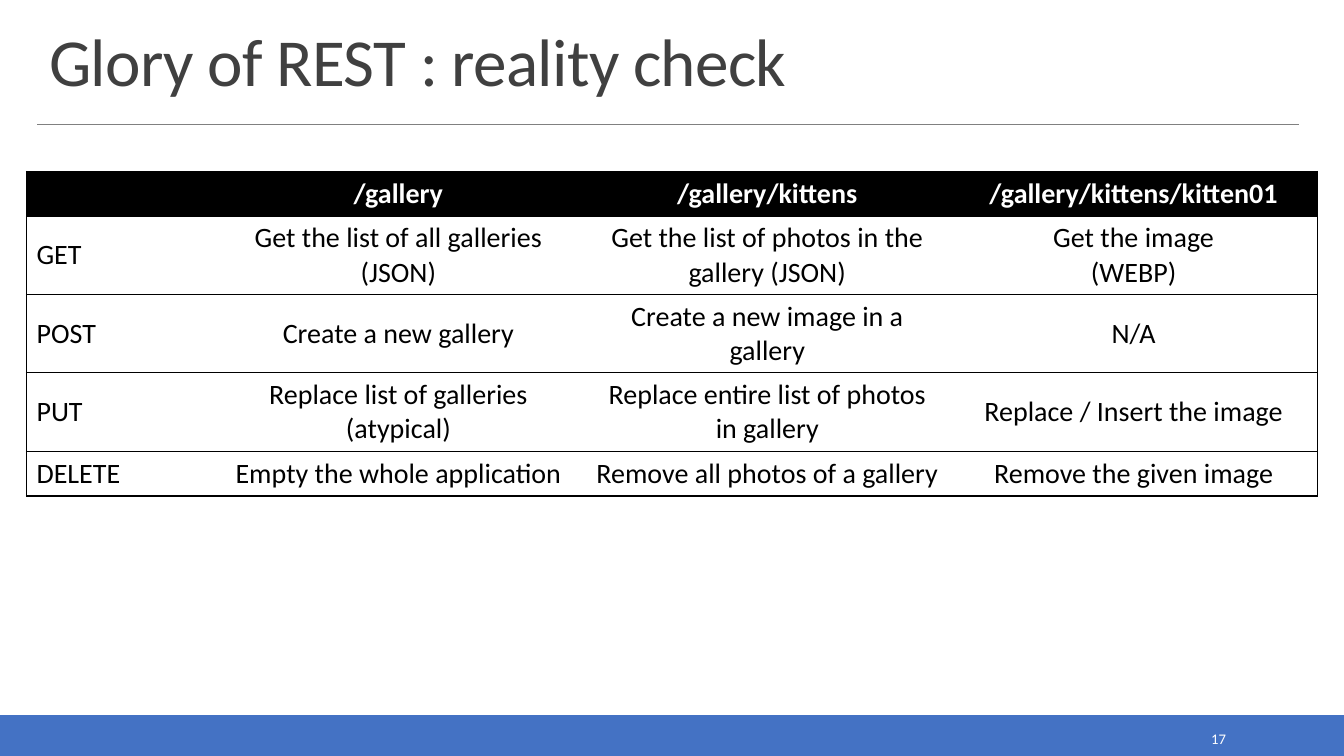
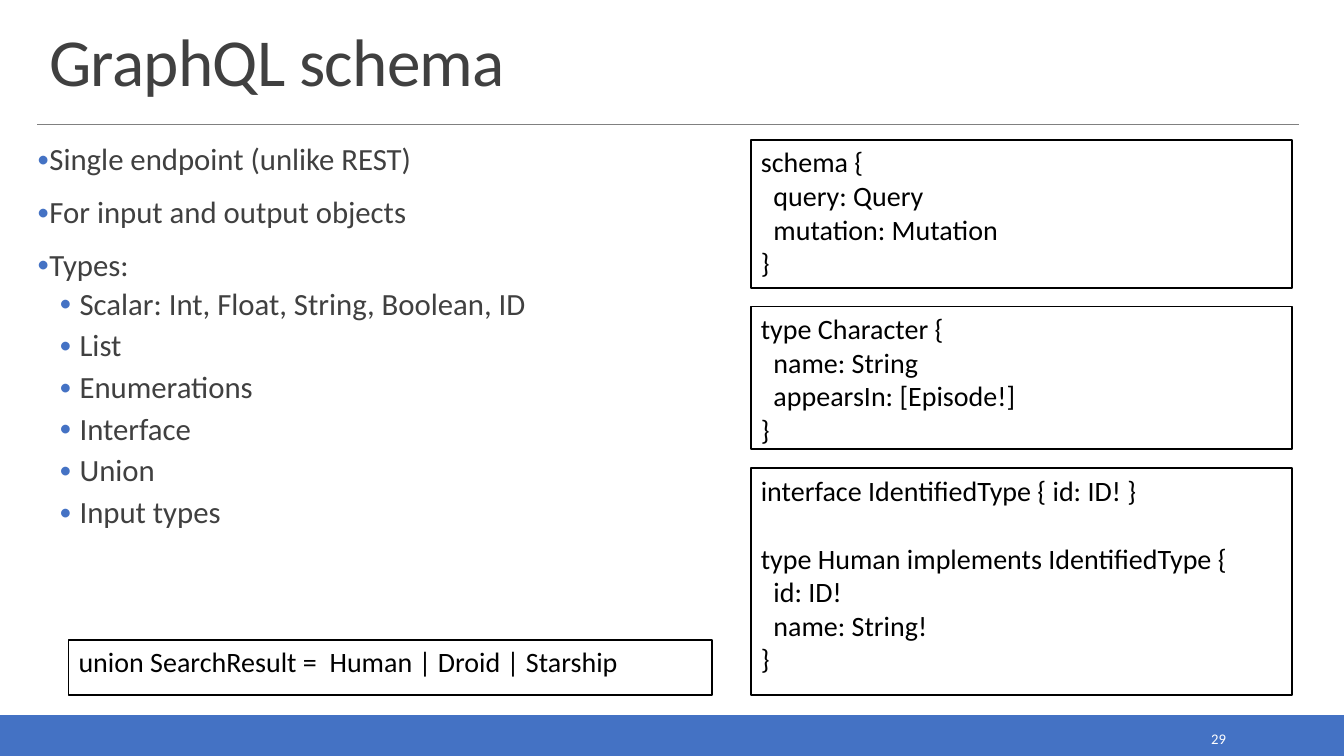
from lxml.etree import SubElement
from pptx import Presentation
from pptx.dml.color import RGBColor
from pptx.enum.shapes import MSO_CONNECTOR as Connector, MSO_SHAPE as Shape
from pptx.enum.text import MSO_ANCHOR as Anchor, PP_ALIGN as Align
from pptx.oxml.ns import qn
from pptx.util import Pt

COLORS = {
    "band": "4472C4",
    "rule": "808080",
    "heading": "404040",
    "ink": "000000",
    "paper": "FFFFFF",
}
FONT = "Calibri"
WIDTH, HEIGHT = 960, 540
BAND_TOP = 511.2
NO_GRID_STYLE = "{2D5ABB26-0587-4C30-8999-92F81FD0307C}"

REST_ROWS = [
    ("", "/gallery", "/gallery/kittens", "/gallery/kittens/kitten01"),
    ("GET", "Get the list of all galleries\n(JSON)",
     "Get the list of photos in the gallery (JSON)", "Get the image\n(WEBP)"),
    ("POST", "Create a new gallery", "Create a new image in a gallery", "N/A"),
    ("PUT", "Replace list of galleries\n(atypical)",
     "Replace entire list of photos in gallery", "Replace / Insert the image"),
    ("DELETE", "Empty the whole application",
     "Remove all photos of a gallery", "Remove the given image"),
]
REST_WIDTHS = (132.5, 266.4, 260.6, 262.8)
REST_HEIGHTS = (32, 56, 56, 56, 32)

SCHEMA_POINTS = [
    (0, "Single endpoint (unlike REST)"),
    (0, "For input and output objects"),
    (0, "Types:"),
    (1, "Scalar: Int, Float, String, Boolean, ID"),
    (1, "List"),
    (1, "Enumerations"),
    (1, "Interface"),
    (1, "Union"),
    (1, "Input types"),
]
POINT_LEVELS = [
    {"margin": 7.2, "hang": 7.2, "before": 12, "after": 2},
    {"margin": 30.24, "hang": 14.4, "before": 2, "after": 4},
]

SCHEMA_CODE = [
    (105.5, [(0, 0, "schema {"), (1, 0, "query: Query"),
             (1, 0, "mutation: Mutation"), (0, 0, "}")]),
    (102, [(0, 0, "type Character {"), (1, 0, "name: String"),
           (1, 0, "appearsIn: [Episode!]"), (0, 0, "}")]),
    (162, [(0, 0, "interface IdentifiedType { id: ID! }"),
           (0, 1, "type Human implements IdentifiedType {"),
           (1, 0, "id: ID!"), (1, 0, "name: String!"), (0, 0, "}")]),
]
UNION_CODE = [(0, 0, "union SearchResult =  Human | Droid | Starship")]
CODE_INDENT, CODE_LINE = 9, 24.4
CODE_TOP, CODE_GAP = 100, 13.5


def color(name):
    return RGBColor.from_string(COLORS[name])


def box(left, top, width, height):
    return Pt(left), Pt(top), Pt(width), Pt(height)


def style(paragraph, size, ink, bold=False, align=Align.LEFT):
    paragraph.alignment = align
    font = paragraph.font
    font.name, font.size, font.bold = FONT, Pt(size), bold
    font.color.rgb = color(ink)


def add_text(slide, place, anchor):
    frame = slide.shapes.add_textbox(*box(*place)).text_frame
    frame.word_wrap = True
    frame.vertical_anchor = anchor
    return frame


def add_rect(slide, place, fill, line):
    rect = slide.shapes.add_shape(Shape.RECTANGLE, *box(*place))
    rect.shadow.inherit = False
    rect.fill.solid()
    rect.fill.fore_color.rgb = color(fill)
    rect.line.color.rgb = color(line)
    rect.line.width = Pt(1.25)
    return rect


def add_lines(frame, texts):
    for index, text in enumerate(texts):
        paragraph = frame.paragraphs[0] if index == 0 else frame.add_paragraph()
        paragraph.text = text
        yield paragraph


def add_slide(deck, title, number):
    slide = deck.slides.add_slide(deck.slide_layouts[6])
    add_rect(slide, (0, BAND_TOP, WIDTH, HEIGHT - BAND_TOP), "band", "band")

    rule = slide.shapes.add_connector(
        Connector.STRAIGHT, Pt(26.6), Pt(88.6), Pt(928), Pt(88.6))
    rule.line.color.rgb = color("rule")
    rule.line.width = Pt(0.5)
    SubElement(rule._element.spPr, qn("a:effectLst"))

    heading = add_text(slide, (28, 14.4, 901.4, 60.5), Anchor.BOTTOM).paragraphs[0]
    heading.text = title
    heading.line_spacing = 0.85
    style(heading, 48, "heading")
    heading.font._element.set("spc", "-50")

    page = add_text(slide, (779.8, 517.7, 103, 20.2), Anchor.MIDDLE).paragraphs[0]
    page.text = str(number)
    style(page, 10.5, "paper", align=Align.RIGHT)
    return slide


def add_border(cell, side):
    line = SubElement(cell._tc.get_or_add_tcPr(), qn(f"a:ln{side}"), w=str(Pt(1)))
    fill = SubElement(line, qn("a:solidFill"))
    SubElement(fill, qn("a:srgbClr"), val=COLORS["ink"])


def add_rest_table(slide):
    place = box(18.9, 122.4, sum(REST_WIDTHS), sum(REST_HEIGHTS))
    table = slide.shapes.add_table(len(REST_ROWS), len(REST_WIDTHS), *place).table
    table.horz_banding = False
    table._tbl.tblPr.find(qn("a:tableStyleId")).text = NO_GRID_STYLE
    for column, width in zip(table.columns, REST_WIDTHS):
        column.width = Pt(width)
    last = len(REST_WIDTHS) - 1
    for r, (texts, height) in enumerate(zip(REST_ROWS, REST_HEIGHTS)):
        table.rows[r].height = Pt(height)
        header = r == 0
        for c, text in enumerate(texts):
            cell = table.cell(r, c)
            sides = ("L" if c == 0 else "") + ("R" if c == last else "") + "TB"
            for side in sides:
                add_border(cell, side)
            cell.fill.solid()
            cell.fill.fore_color.rgb = color("ink" if header else "paper")
            cell.vertical_anchor = Anchor.MIDDLE
            for paragraph in add_lines(cell.text_frame, text.split("\n")):
                style(paragraph, 20, "paper" if header else "ink", header,
                      Align.LEFT if c == 0 else Align.CENTER)


def add_bullet(paragraph, margin, hang):
    props = paragraph._p.get_or_add_pPr()
    props.set("marL", str(Pt(margin)))
    props.set("indent", str(-Pt(hang)))
    tint = SubElement(props, qn("a:buClr"))
    SubElement(tint, qn("a:srgbClr"), val=COLORS["band"])
    SubElement(props, qn("a:buSzPct"), val="80000")
    SubElement(props, qn("a:buFont"), typeface=FONT)
    SubElement(props, qn("a:buChar"), char="•")


def add_points(slide):
    frame = add_text(slide, (26.6, 100, 396.7, 396.7), Anchor.TOP)
    frame.margin_left = frame.margin_right = 0
    frame.margin_top = frame.margin_bottom = Pt(2.9)
    levels, texts = zip(*SCHEMA_POINTS)
    for level, paragraph in zip(levels, add_lines(frame, texts)):
        look = POINT_LEVELS[level]
        paragraph.level = level
        add_bullet(paragraph, look["margin"], look["hang"])
        paragraph.line_spacing = 0.9
        paragraph.space_before = Pt(look["before"])
        paragraph.space_after = Pt(look["after"])
        style(paragraph, 22, "heading")


def add_code(slide, place, lines):
    frame = add_rect(slide, place, "paper", "ink").text_frame
    frame.word_wrap = True
    frame.vertical_anchor = Anchor.TOP
    depths, gaps, texts = zip(*lines)
    for depth, gap, paragraph in zip(depths, gaps, add_lines(frame, texts)):
        paragraph._p.get_or_add_pPr().set("marL", str(Pt(depth * CODE_INDENT)))
        paragraph.space_before = Pt(gap * CODE_LINE)
        style(paragraph, 20, "ink")


def main():
    deck = Presentation()
    deck.slide_width, deck.slide_height = Pt(WIDTH), Pt(HEIGHT)

    add_rest_table(add_slide(deck, "Glory of REST : reality check", 17))

    schema = add_slide(deck, "GraphQL schema", 29)
    add_points(schema)
    top = CODE_TOP
    for height, lines in SCHEMA_CODE:
        add_code(schema, (536.4, top, 386.6, height), lines)
        top += height + CODE_GAP
    add_code(schema, (49, 457, 459.4, 39.5), UNION_CODE)

    deck.save("out.pptx")


if __name__ == "__main__":
    main()
